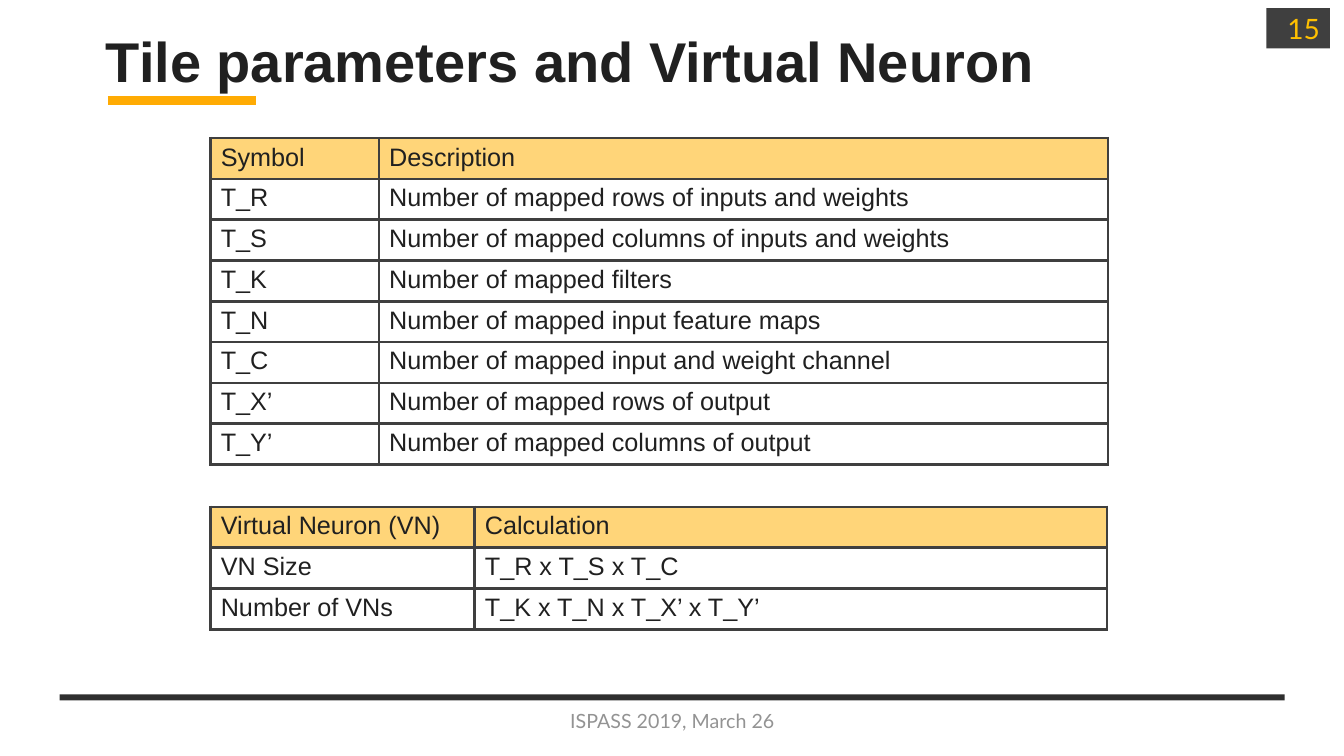
from lxml import etree
from pptx import Presentation
from pptx.dml.color import RGBColor
from pptx.enum.shapes import MSO_CONNECTOR, MSO_SHAPE
from pptx.enum.text import MSO_ANCHOR, MSO_AUTO_SIZE, PP_ALIGN
from pptx.oxml.ns import qn
from pptx.util import Inches, Pt

LEFT, CENTER, RIGHT = PP_ALIGN.LEFT, PP_ALIGN.CENTER, PP_ALIGN.RIGHT
MIDDLE = MSO_ANCHOR.MIDDLE
NO_AUTOFIT = MSO_AUTO_SIZE.NONE
RECTANGLE = MSO_SHAPE.RECTANGLE
STRAIGHT = MSO_CONNECTOR.STRAIGHT

WHITE = RGBColor(0xFF, 0xFF, 0xFF)
INK = RGBColor(0x20, 0x20, 0x20)
CHARCOAL = RGBColor(0x3F, 0x3F, 0x3F)
FOOTER_BAR = RGBColor(0x2F, 0x2F, 0x2F)
FOOTER_GRAY = RGBColor(0x93, 0x93, 0x93)
AMBER = RGBColor(0xFF, 0xAB, 0x03)
NUMBER_GOLD = RGBColor(0xFF, 0xC0, 0x00)
HEADER_GOLD = RGBColor(0xFF, 0xD5, 0x79)

TITLE_STYLE = {"name": "Arial", "size": Pt(40), "bold": True, "color": INK}
TABLE_STYLE = {"name": "Arial", "size": Pt(18), "bold": False, "color": INK}
NUMBER_STYLE = {"name": "Lato", "size": Pt(20), "color": NUMBER_GOLD}
FOOTER_STYLE = {"name": "Lato", "size": Pt(14), "color": FOOTER_GRAY}

TABLE_LEFT = 15.68
ROW_HEIGHT = 5.4
BORDER_WIDTH = Pt(2.25)

TILE_PARAMETERS = [
    ("Symbol", "Description"),
    ("T_R", "Number of mapped rows of inputs and weights"),
    ("T_S", "Number of mapped columns of inputs and weights"),
    ("T_K", "Number of mapped filters"),
    ("T_N", "Number of mapped input feature maps"),
    ("T_C", "Number of mapped input and weight channel"),
    ("T_X’", "Number of mapped rows of output"),
    ("T_Y’", "Number of mapped columns of output"),
]
VIRTUAL_NEURON = [
    ("Virtual Neuron (VN)", "Calculation"),
    ("VN Size", "T_R x T_S x T_C"),
    ("Number of VNs", "T_K x T_N x T_X’ x T_Y’"),
]


class SlideBuilder:
    """Draws on one slide; all lengths are percentages of its width or height."""

    def __init__(self, presentation):
        self.width = presentation.slide_width
        self.height = presentation.slide_height
        self.slide = presentation.slides.add_slide(presentation.slide_layouts[5])
        self.shapes = self.slide.shapes

    def across(self, share):
        return round(self.width * share / 100)

    def down(self, share):
        return round(self.height * share / 100)

    def box(self, left, top, width, height):
        return (self.across(left), self.down(top),
                self.across(width), self.down(height))

    def set_text(self, text_frame, text, style, alignment=LEFT):
        text_frame.text = text
        paragraph = text_frame.paragraphs[0]
        paragraph.alignment = alignment
        font = paragraph.runs[0].font
        for attribute, value in style.items():
            if attribute == "color":
                font.color.rgb = value
            else:
                setattr(font, attribute, value)
        return paragraph

    def title(self, text, *place):
        title = self.shapes.title
        title.left, title.top, title.width, title.height = self.box(*place)
        frame = title.text_frame
        frame.auto_size = NO_AUTOFIT
        frame.vertical_anchor = MIDDLE
        self.set_text(frame, text, TITLE_STYLE).line_spacing = 0.9

    def rectangle(self, color, *place):
        shape = self.shapes.add_shape(RECTANGLE, *self.box(*place))
        shape.shadow.inherit = False
        shape.fill.solid()
        shape.fill.fore_color.rgb = color
        shape.line.fill.background()
        return shape

    def badge(self, text, color, style, *place):
        frame = self.rectangle(color, *place).text_frame
        frame.vertical_anchor = MIDDLE
        self.set_text(frame, text, style, RIGHT)

    def caption(self, text, style, *place):
        frame = self.shapes.add_textbox(*self.box(*place)).text_frame
        frame.word_wrap = True
        frame.vertical_anchor = MIDDLE
        self.set_text(frame, text, style, CENTER)

    def rule(self, color, weight, start, end, top):
        line = self.shapes.add_connector(
            STRAIGHT, self.across(start), self.down(top),
            self.across(end), self.down(top))
        line.line.color.rgb = color
        line.line.width = Pt(weight)
        etree.SubElement(line._element.spPr, qn("a:effectLst"))

    def border(self, cell):
        """Put the table's line on all four sides of a cell, ahead of its fill."""
        properties = cell._tc.get_or_add_tcPr()
        for index, side in enumerate(("lnL", "lnR", "lnT", "lnB")):
            line = etree.Element(qn(f"a:{side}"), w=str(BORDER_WIDTH))
            fill = etree.SubElement(line, qn("a:solidFill"))
            etree.SubElement(fill, qn("a:srgbClr"), val=str(CHARCOAL))
            properties.insert(index, line)

    def table(self, rows, top, column_widths):
        place = self.box(TABLE_LEFT, top, sum(column_widths), ROW_HEIGHT * len(rows))
        table = self.shapes.add_table(len(rows), len(column_widths), *place).table
        table.first_row = table.horz_banding = False
        for column, width in zip(table.columns, column_widths):
            column.width = self.across(width)
        for row_index, texts in enumerate(rows):
            table.rows[row_index].height = self.down(ROW_HEIGHT)
            for column_index, text in enumerate(texts):
                cell = table.cell(row_index, column_index)
                self.set_text(cell.text_frame, text, TABLE_STYLE)
                cell.fill.solid()
                cell.fill.fore_color.rgb = WHITE if row_index else HEADER_GOLD
                self.border(cell)


def main():
    presentation = Presentation()
    presentation.slide_width = Inches(13.33)
    presentation.slide_height = Inches(7.5)
    builder = SlideBuilder(presentation)
    builder.rule(AMBER, 6.25, 8.03, 19.05, 13.33)
    builder.rectangle(FOOTER_BAR, 4.43, 91.87, 91.15, 0.8)
    builder.badge("15", CHARCOAL, NUMBER_STYLE, 94.22, 1.07, 4.73, 5.33)
    builder.title("Tile parameters and Virtual Neuron", 7.13, 3.6, 81.62, 9.73)
    builder.caption("ISPASS 2019, March 26", FOOTER_STYLE, 38.78, 92.67, 22.5, 5.33)
    builder.table(TILE_PARAMETERS, 18.27, (12.53, 54.24))
    builder.table(VIRTUAL_NEURON, 67.07, (19.65, 47.04))
    presentation.save("out.pptx")


if __name__ == "__main__":
    main()
